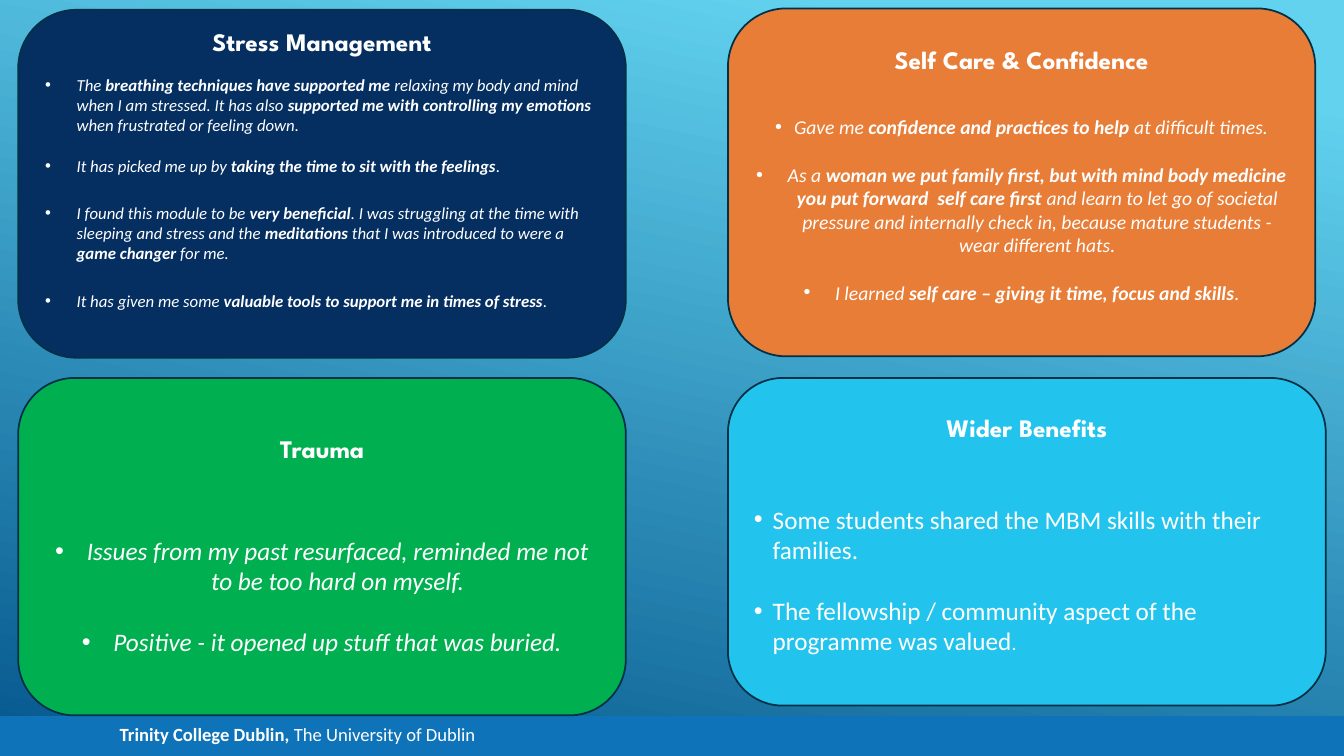
from dataclasses import dataclass

from lxml import etree
from pptx import Presentation
from pptx.dml.color import RGBColor
from pptx.enum import shapes, text
from pptx.oxml import ns
from pptx.util import Pt

LEFT, MID = text.PP_ALIGN.LEFT, text.PP_ALIGN.CENTER


@dataclass(frozen=True)
class Theme:
    white: str = "FFFFFF"
    edge: str = "023046"
    bar: str = "0E73B9"
    navy: str = "052F61"
    orange: str = "E87D37"
    cyan: str = "22C4ED"
    green: str = "00B050"
    sky: tuple = ("62D2EF", "05578D")
    head: str = "League Spartan"
    body: str = "Calibri"
    title: float = 18
    large: float = 18
    medium: float = 14
    small: float = 12
    foot: float = 13.3


class Deck:
    def __init__(self, theme):
        self.theme = theme
        self.prs = Presentation()
        self.prs.slide_width, self.prs.slide_height = Pt(960), Pt(540)
        self.slide = self.prs.slides.add_slide(self.prs.slide_layouts[6])

    def sky(self):
        """Fill the background with a slanted gradient."""
        fill = self.slide.background.fill
        fill.gradient()
        fill.gradient_angle = 258
        for stop, tone, pos in zip(fill.gradient_stops, self.theme.sky, (0.1, 1)):
            stop.color.rgb = RGBColor.from_string(tone)
            stop.position = pos

    def shape(self, kind, box, tone, insets):
        item = self.slide.shapes.add_shape(kind, *map(Pt, box))
        item.shadow.inherit = False
        item.fill.solid()
        item.fill.fore_color.rgb = RGBColor.from_string(tone)
        item.line.fill.background()
        frame = item.text_frame
        look = dict(zip(("margin_left", "margin_top", "margin_right", "margin_bottom"),
                        map(Pt, insets)))
        look.update(word_wrap=True, vertical_anchor=text.MSO_ANCHOR.TOP)
        for key, val in look.items():
            setattr(frame, key, val)
        return item

    def label(self, para, words, base, mark):
        """Add runs; the parts between asterisks take the mark format."""
        for num, part in enumerate(words.split("*")):
            if part:
                run = para.add_run()
                run.text = part
                run.font.color.rgb = RGBColor.from_string(self.theme.white)
                look = {**base, **mark} if num % 2 else base
                for key, val in look.items():
                    setattr(run.font, key, val)

    def bullet(self, para, indent):
        props = para._p.get_or_add_pPr()
        props.set("marL", str(Pt(indent)))
        props.set("indent", str(-Pt(indent)))
        tint = etree.SubElement(props, ns.qn("a:buClr"))
        etree.SubElement(tint, ns.qn("a:srgbClr"), val=self.theme.white)
        etree.SubElement(props, ns.qn("a:buFont"), typeface="Arial")
        etree.SubElement(props, ns.qn("a:buChar"), char="•")

    def card(self, box, tone, top, title, items, size,
             align=LEFT, italic=True, mark=None):
        """Draw a rounded card; items are (space before, indent, words)."""
        item = self.shape(shapes.MSO_SHAPE.ROUNDED_RECTANGLE, box, tone,
                          (7.2, top, 7.2, 3.6))
        item.adjustments[0] = 0.167
        item.line.color.rgb = RGBColor.from_string(self.theme.edge)
        item.line.width = Pt(1.25)
        para = item.text_frame.paragraphs[0]
        para.alignment = MID
        self.label(para, title, {"name": self.theme.head, "bold": True,
                                 "size": Pt(self.theme.title)}, {})
        base = {"name": self.theme.body, "size": Pt(size),
                "bold": False, "italic": italic}
        for gap, indent, words in items:
            para = item.text_frame.add_paragraph()
            self.bullet(para, indent)
            para.alignment = align
            para.space_before = Pt(gap)
            self.label(para, words, base, mark or {"bold": True})

    def footer(self, words):
        bar = self.shape(shapes.MSO_SHAPE.RECTANGLE, (0, 511.5, 960, 28.5),
                         self.theme.bar, (85.5, 5, 9.4, 5))
        para = bar.text_frame.paragraphs[0]
        para.alignment = LEFT
        self.label(para, words, {"name": self.theme.body, "bold": False,
                                 "size": Pt(self.theme.foot)}, {"bold": True})


def main():
    t = Theme()
    deck = Deck(t)
    deck.sky()
    deck.footer("*Trinity College Dublin, *The University of Dublin")
    west, east, low = 13, 520, 270
    deck.card((west, 7, 434, 248.5), t.navy, 0, "Stress Management", [
        (12.5, 22.5, "The *breathing techniques have supported me *relaxing my body and mind "
                     "when I am stressed. It has also *supported me with controlling my "
                     "emotions *when frustrated or feeling down."),
        (14.5, 22.5, "It has picked me up by *taking the time to sit with the feelings*."),
        (19.5, 22.5, "I found this module to be *very beneficial*. I was struggling at the "
                     "time with sleeping and stress and the *meditations* that I was "
                     "introduced to were a *game changer *for me."),
        (19.5, 22.5, "It has given me some *valuable tools to support me in times of stress*."),
    ], t.small)
    deck.card((east, 6, 419.5, 248.5), t.orange, 13.5, "Self Care & Confidence", [
        (29, 13.5, "Gave me *confidence and practices to help *at difficult times."),
        (17, 22.5, "As a *woman we put family first, but with mind body medicine you put "
                   "forward  self care first *and learn to let go of societal pressure and "
                   "internally check in, because mature students - wear different hats."),
        (17, 22.5, "I learned *self care – giving it time, focus and skills*."),
    ], t.medium, MID)
    deck.card((east, low, 427, 234), t.cyan, 13, "Wider Benefits", [
        (44, 13.5, "Some students shared the MBM skills with their families."),
        (22, 13.5, "The fellowship / community aspect of the programme was valued*.*"),
    ], t.large, italic=False, mark={"size": Pt(t.medium)})
    deck.card((west, low, 434, 241), t.green, 28, "Trauma", [
        (51, 22.5, "Issues from my past resurfaced, reminded me not to be too hard on myself."),
        (22, 22.5, "Positive - it opened up stuff that was buried."),
    ], t.large, MID)
    deck.prs.save("out.pptx")


if __name__ == "__main__":
    main()
